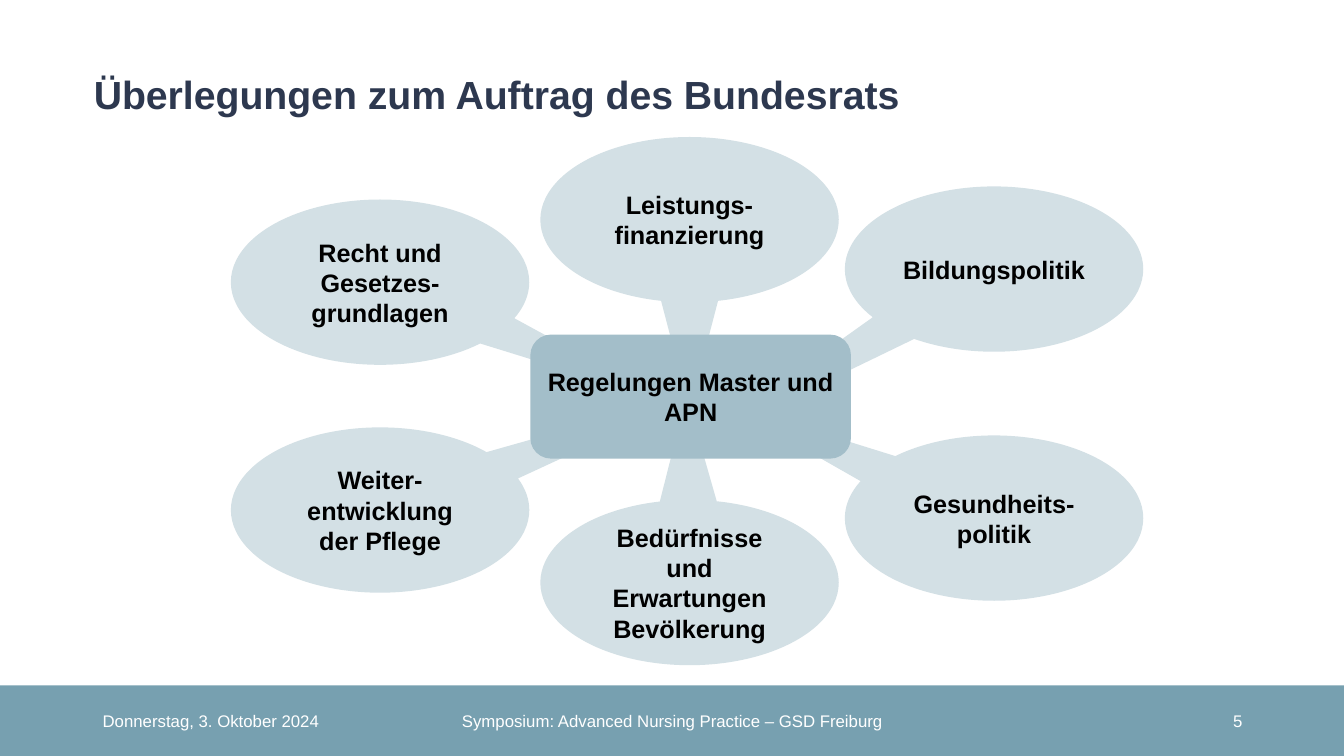
from pptx import Presentation
from pptx.dml.color import RGBColor
from pptx.enum.shapes import MSO_SHAPE
from pptx.enum.text import MSO_ANCHOR, PP_ALIGN
from pptx.util import Inches, Pt

BUBBLE = MSO_SHAPE.OVAL_CALLOUT
ROUND, RECT = MSO_SHAPE.ROUNDED_RECTANGLE, MSO_SHAPE.RECTANGLE
TOP, MIDDLE = MSO_ANCHOR.TOP, MSO_ANCHOR.MIDDLE
LEFT, CENTER, RIGHT = PP_ALIGN.LEFT, PP_ALIGN.CENTER, PP_ALIGN.RIGHT
COLORS = {"band": "77A0B0", "title": "2D384F", "bubble": "D3E0E5",
          "core": "A3BEC9", "text": "000000", "white": "FFFFFF"}

prs = Presentation()
prs.slide_width, prs.slide_height = Inches(13.33), Inches(7.5)
slide = prs.slides.add_slide(prs.slide_layouts[5])


def write(shape, text, size, color, bold=False, align=CENTER, anchor=MIDDLE):
    frame = shape.text_frame
    frame.word_wrap = True
    frame.vertical_anchor = anchor
    para = frame.paragraphs[0]
    para.text = text
    para.alignment = align
    font = para.font
    font.name, font.size, font.bold = "Arial", Pt(size), bold
    font.color.rgb = RGBColor.from_string(COLORS[color])


def draw(kind, left, top, width, height, color):
    shape = slide.shapes.add_shape(
        kind, Inches(left), Inches(top), Inches(width), Inches(height))
    shape.shadow.inherit = False
    shape.fill.solid()
    shape.fill.fore_color.rgb = RGBColor.from_string(COLORS[color])
    shape.line.fill.background()
    return shape


# Title
title = slide.shapes.title
title.left, title.top = Inches(0.83), Inches(0.7)
title.width, title.height = Inches(11.8), Inches(0.42)
write(title, "Überlegungen zum Auftrag des Bundesrats", 28, "title", True,
      LEFT, TOP)
title.text_frame.paragraphs[0].line_spacing = 0.9

# Footer band
draw(RECT, 0, 6.8, 13.33, 0.7, "band")
footers = [
    ("Donnerstag, 3. Oktober 2024", 0.92, 3, LEFT),
    ("Symposium: Advanced Nursing Practice – GSD Freiburg", 4.42, 4.5, CENTER),
    ("5", 9.42, 3, RIGHT),
]
for text, left, width, align in footers:
    box = slide.shapes.add_textbox(
        Inches(left), Inches(6.95), Inches(width), Inches(0.4))
    write(box, text, 12, "white", align=align)

# Topic bubbles: text, left, top, tail tip relative to the centre
topics = [
    ("Leistungs-finanzierung", 5.36, 1.36, 0, 1.15),
    ("Weiter-entwicklung der Pflege", 2.29, 4.24, 1.12, -0.74),
    ("Recht und Gesetzes-grundlagen", 2.29, 1.98, 0.96, 0.72),
    ("Bildungspolitik", 8.38, 1.85, -1.02, 1.08),
    ("Gesundheits-politik", 8.38, 4.32, -0.91, -0.7),
    ("Bedürfnisse und Erwartungen Bevölkerung", 5.36, 4.96, -0.01, -1.13),
]
for text, left, top, tipx, tipy in topics:
    bubble = draw(BUBBLE, left, top, 2.96, 1.64, "bubble")
    bubble.adjustments[0], bubble.adjustments[1] = tipx, tipy
    write(bubble, text, 18, "text", True)

# Core topic, covering the tails
core = draw(ROUND, 5.26, 3.32, 3.18, 1.23, "core")
write(core, "Regelungen Master und APN", 18, "text", True)

prs.save("out.pptx")
